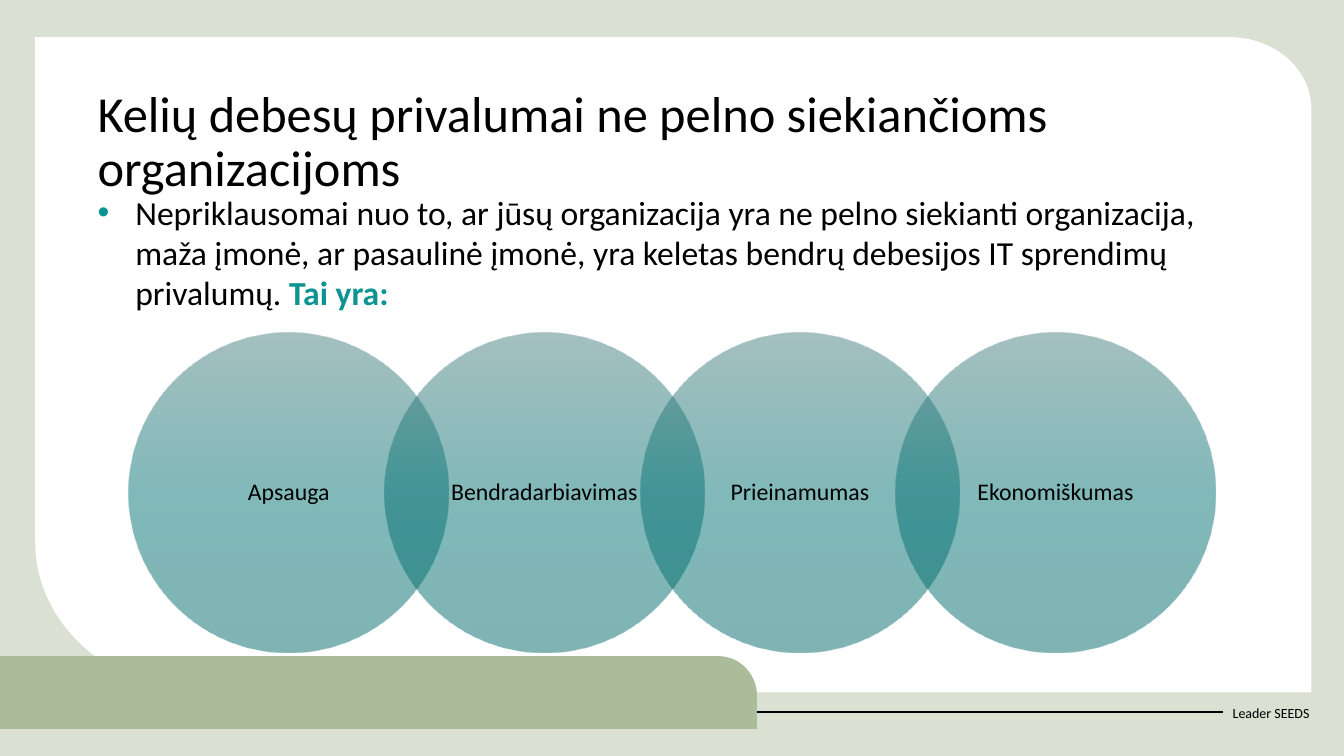
from math import sqrt

from lxml.etree import SubElement
from pptx import Presentation
from pptx.dml.color import RGBColor
from pptx.enum.shapes import MSO_CONNECTOR as Conn, MSO_SHAPE as Shape
from pptx.enum.text import MSO_ANCHOR as Anchor, PP_ALIGN as Align
from pptx.oxml import parse_xml
from pptx.oxml.ns import nsdecls, qn
from pptx.util import Pt

TITLE = "Kelių debesų privalumai ne pelno siekiančioms organizacijoms"
INTRO = ("Nepriklausomai nuo to, ar jūsų organizacija yra ne pelno siekianti "
         "organizacija, maža įmonė, ar pasaulinė įmonė, yra keletas bendrų "
         "debesijos IT sprendimų privalumų. ")
INTRO_END = "Tai yra:"
BENEFITS = ["Apsauga", "Bendradarbiavimas", "Prieinamumas", "Ekonomiškumas"]
FOOTER = "Leader SEEDS"

THEME = {
    "font": "Calibri",
    "text": "000000", "accent": "0D9390",
    "back": "DAE0D2", "panel": "FFFFFF", "bar": "AABC99",
    "circle": [(0, "4B8081"), (50, "037273"), (100, "006869")],
    "circle_alpha": 50,
    "title_size": 36, "intro_size": 24, "label_size": 17, "footer_size": 10,
}

# Outlines in points: a pair is a corner, three pairs are a Bezier curve.
PANEL = [(25.2, 26.6), (878.4, 26.6),
         ((910.8, 26.6), (936.7, 49.7), (936.7, 77.8)),
         (936.7, 494.6), (147.6, 494.6),
         ((79.9, 494.6), (25.2, 446.4), (25.2, 387.4))]
BAR = [(0, 520.6), (0, 468.7), (513.4, 468.7),
       ((528.5, 468.7), (540.7, 481.7), (540.7, 496.8)),
       (540.7, 520.6)]
CURVE_STEPS = 32

CIRCLE_LEFT, CIRCLE_TOP, DIAMETER = 92.2, 237.6, 228.2
CIRCLE_STEP = DIAMETER * 0.8
LABEL_SIDE = DIAMETER / sqrt(2)
LABEL_INSET = (DIAMETER - LABEL_SIDE) / 2


def rgb(name):
    return RGBColor.from_string(THEME[name])


def flatten(outline):
    """Turn corners and Bezier curves into a list of points."""
    points = []
    for part in outline:
        if len(part) == 2:
            points.append(part)
            continue
        ctrl = (points[-1], *part)
        for i in range(1, CURVE_STEPS + 1):
            t = i / CURVE_STEPS
            weights = ((1 - t) ** 3, 3 * t * (1 - t) ** 2,
                       3 * t * t * (1 - t), t ** 3)
            points.append(tuple(sum(w * c[axis] for w, c in zip(weights, ctrl))
                                for axis in (0, 1)))
    return points


def add_outline(s, outline, color):
    points = [(Pt(x), Pt(y)) for x, y in flatten(outline)]
    builder = s.shapes.build_freeform(*points[0])
    builder.add_line_segments(points[1:], close=True)
    sp = builder.convert_to_shape()
    sp.shadow.inherit = False
    sp.fill.solid()
    sp.fill.fore_color.rgb = rgb(color)
    sp.line.fill.background()


def add_box(s, left, top, width, height, anchor=Anchor.TOP):
    """Add an empty wrapping text box and return its text frame."""
    sp = s.shapes.add_textbox(Pt(left), Pt(top), Pt(width), Pt(height))
    tf = sp.text_frame
    tf.word_wrap = True
    tf.vertical_anchor = anchor
    return tf


def add_run(p, text, size, color="text", bold=False):
    r = p.add_run()
    r.text = text
    r.font.name = THEME["font"]
    r.font.size = Pt(THEME[size])
    r.font.color.rgb = rgb(color)
    r.font.bold = bold


def add_bullet(p, indent):
    pPr = p._p.get_or_add_pPr()
    pPr.set("marL", str(Pt(indent)))
    pPr.set("indent", str(-Pt(indent)))
    color = SubElement(pPr, qn("a:buClr"))
    SubElement(color, qn("a:srgbClr"), val=THEME["accent"])
    SubElement(pPr, qn("a:buFont"), typeface="Arial")
    SubElement(pPr, qn("a:buChar"), char="•")


def add_circle(s, left):
    sp = s.shapes.add_shape(Shape.OVAL, Pt(left), Pt(CIRCLE_TOP),
                            Pt(DIAMETER), Pt(DIAMETER))
    sp.shadow.inherit = False
    sp.line.fill.background()
    sp.fill.background()
    alpha = THEME["circle_alpha"] * 1000
    stops = "".join(
        f'<a:gs pos="{pos * 1000}"><a:srgbClr val="{color}">'
        f'<a:alpha val="{alpha}"/></a:srgbClr></a:gs>'
        for pos, color in THEME["circle"])
    gradient = parse_xml(
        f'<a:gradFill {nsdecls("a")} rotWithShape="1"><a:gsLst>{stops}</a:gsLst>'
        '<a:lin ang="5400000" scaled="0"/></a:gradFill>')
    spPr = sp._element.spPr
    spPr.replace(spPr.find(qn("a:noFill")), gradient)


def add_benefit(s, index, text):
    left = CIRCLE_LEFT + index * CIRCLE_STEP
    add_circle(s, left)
    tf = add_box(s, left + LABEL_INSET, CIRCLE_TOP + LABEL_INSET,
                 LABEL_SIDE, LABEL_SIDE, Anchor.MIDDLE)
    tf.margin_left = tf.margin_right = Pt(12.2)
    tf.margin_top = tf.margin_bottom = Pt(1.4)
    p = tf.paragraphs[0]
    p.alignment = Align.CENTER
    p.line_spacing = 0.9
    add_run(p, text, "label_size")


def add_frame(s):
    """Add the background, white panel, footer and green bar."""
    s.background.fill.solid()
    s.background.fill.fore_color.rgb = rgb("back")
    add_outline(s, PANEL, "panel")
    tf = add_box(s, 873.4, 494.6, 72.7, 28.8, Anchor.MIDDLE)
    add_run(tf.paragraphs[0], FOOTER, "footer_size")
    rule = s.shapes.add_connector(Conn.STRAIGHT, Pt(0), Pt(508.8),
                                  Pt(873.4), Pt(508.8))
    rule.line.color.rgb = rgb("text")
    rule.line.width = Pt(1.5)
    SubElement(rule._element.spPr, qn("a:effectLst"))
    add_outline(s, BAR, "bar")


def main():
    prs = Presentation()
    prs.slide_width, prs.slide_height = Pt(960), Pt(540)
    s = prs.slides.add_slide(prs.slide_layouts[6])
    add_frame(s)

    p = add_box(s, 62.6, 59.8, 834.5, 63.4).paragraphs[0]
    p.line_spacing = 0.9
    add_run(p, TITLE, "title_size")

    p = add_box(s, 62.6, 133.2, 807.8, 94.3).paragraphs[0]
    add_bullet(p, 27)
    add_run(p, INTRO, "intro_size")
    add_run(p, INTRO_END, "intro_size", "accent", bold=True)

    for index, text in enumerate(BENEFITS):
        add_benefit(s, index, text)
    prs.save("out.pptx")


if __name__ == "__main__":
    main()
